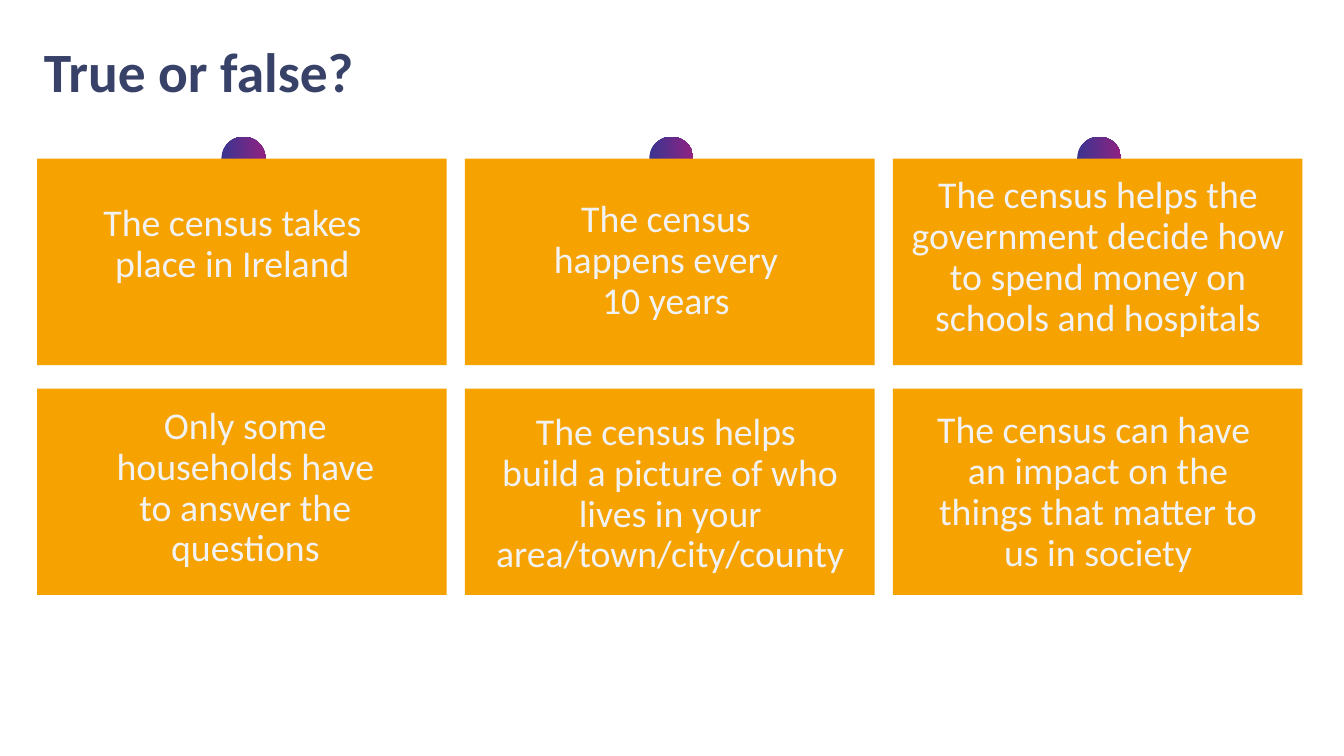
from pptx import Presentation
from pptx import util as u
from pptx.dml.color import RGBColor
from pptx.enum import shapes, text

Pt = u.Pt


def color(code):
    return RGBColor.from_string(code)


def style(par, size, code, bold=False):
    par.line_spacing = 0.9
    par.font.name = "Calibri"
    par.font.size = Pt(size)
    par.font.bold = bold
    par.font.color.rgb = color(code)


deck = Presentation()
deck.slide_width, deck.slide_height = Pt(1280), Pt(720)
slide = deck.slides.add_slide(deck.slide_layouts[5])

# Title
title = slide.shapes.title
title.left, title.top, title.width, title.height = Pt(34.5), Pt(44), Pt(1158), Pt(54)
frame = title.text_frame
frame.text = "True or false?"
frame.auto_size = text.MSO_AUTO_SIZE.NONE
frame.vertical_anchor = text.MSO_ANCHOR.MIDDLE
frame.paragraphs[0].alignment = text.PP_ALIGN.LEFT
style(frame.paragraphs[0], 52.8, "384168", True)

# Grid of cards
left, top = 35.3, 151.2
wide, high = 390.2, 196.6
step, drop = 407.5, 218.9
dot = 42

# Dots that peek out above the top row
for col in range(3):
    x = left + col * step + wide / 2 - dot / 2 + 1.5
    disc = slide.shapes.add_shape(shapes.MSO_SHAPE.OVAL, Pt(x), Pt(top - dot / 2), Pt(dot), Pt(dot))
    disc.shadow.inherit = False
    disc.line.fill.background()
    disc.fill.gradient()
    disc.fill.gradient_angle = 0
    for stop, code in zip(disc.fill.gradient_stops, ("3A3590", "8F2282")):
        stop.color.rgb = color(code)

# Cards
for row in range(2):
    for col in range(3):
        card = slide.shapes.add_shape(
            shapes.MSO_SHAPE.RECTANGLE, Pt(left + col * step), Pt(top + row * drop), Pt(wide), Pt(high))
        card.shadow.inherit = False
        card.line.fill.background()
        card.fill.solid()
        card.fill.fore_color.rgb = color("F6A200")

# Statements: left, top, width, height, words
claims = [
    (81.4, 172.8, 280, 121, "The census takes place in Ireland"),
    (509.8, 172.8, 249, 152.6, "The census happens every 10 years"),
    (853.9, 157.7, 383.8, 175.7,
     "The census helps the government decide how to spend money on schools and hospitals"),
    (92.2, 367.2, 283, 195.8, "Only some households have to answer the questions"),
    (446.4, 373, 383.8, 195.8,
     "The census helps \nbuild a picture of who lives in your area/town/city/county"),
    (871.9, 371.5, 347.8, 195.8,
     "The census can have \nan impact on the things that matter to us in society"),
]
for x, y, w, h, words in claims:
    frame = slide.shapes.add_textbox(Pt(x), Pt(y), Pt(w), Pt(h)).text_frame
    frame.word_wrap = True
    frame.vertical_anchor = text.MSO_ANCHOR.MIDDLE
    frame.margin_left = frame.margin_right = Pt(14.4)
    frame.margin_top = frame.margin_bottom = Pt(14.4)
    par = frame.paragraphs[0]
    par.text = words
    par.alignment = text.PP_ALIGN.CENTER
    style(par, 36, "F2F2F2")

deck.save("out.pptx")
